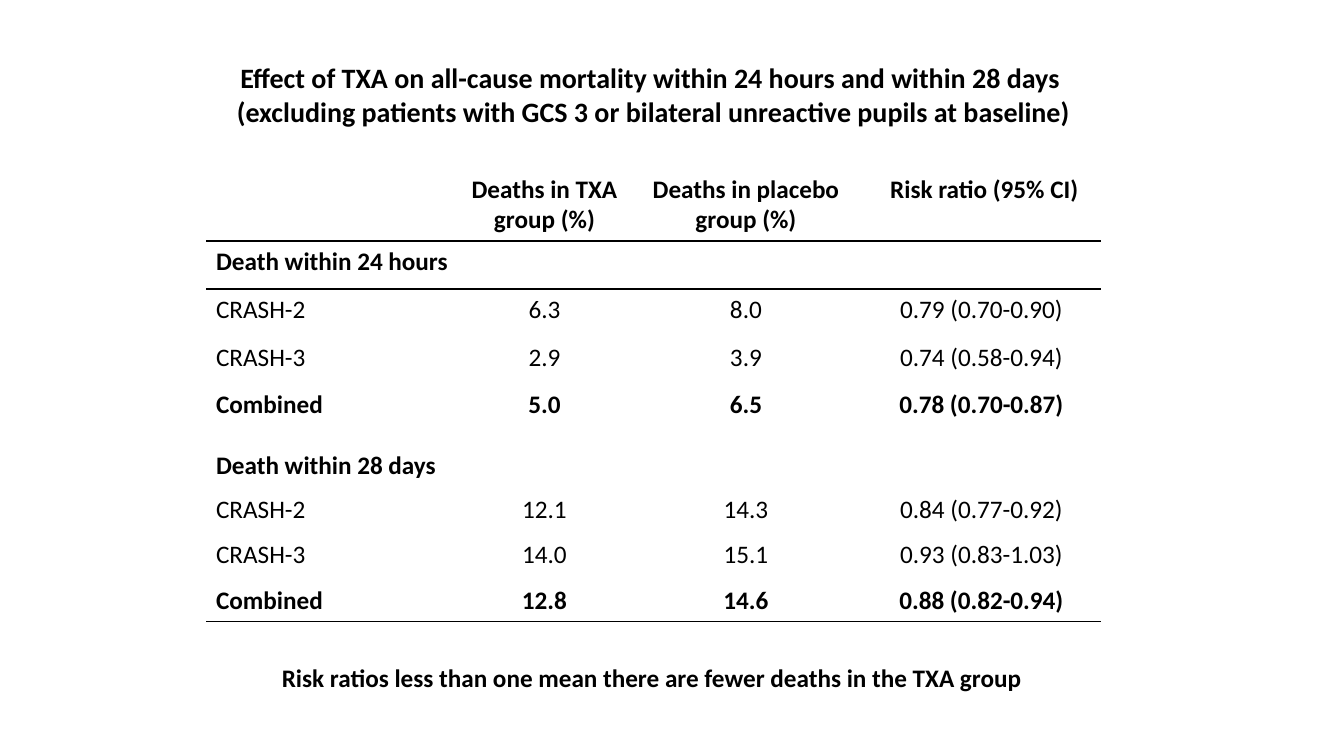
from lxml import etree
from pptx import Presentation
from pptx.dml.color import RGBColor
from pptx.enum.text import MSO_ANCHOR, PP_ALIGN
from pptx.oxml.ns import qn
from pptx.util import Emu, Pt

BLACK = RGBColor(0x00, 0x00, 0x00)
CENTER, LEFT = PP_ALIGN.CENTER, PP_ALIGN.LEFT
TOP = MSO_ANCHOR.TOP
EMU_PER_PX = 914400 / 100.8

TITLE = [
    "Effect of TXA on all-cause mortality within 24 hours and within 28 days ",
    "(excluding patients with GCS 3 or bilateral unreactive pupils at baseline)",
]
CONCLUSION = ["Risk ratios less than one mean there are fewer deaths in the TXA group"]
MORTALITY = [
    ["", "Deaths in TXA group (%)", "Deaths in placebo group (%)", " Risk ratio (95% CI)"],
    ["Death within 24 hours", "", "", ""],
    ["CRASH-2", "6.3", "8.0", "0.79 (0.70-0.90)"],
    ["CRASH-3", "2.9", "3.9", "0.74 (0.58-0.94)"],
    ["Combined", "5.0", "6.5", "0.78 (0.70-0.87)"],
    ["Death within 28 days", "", "", ""],
    ["CRASH-2", "12.1", "14.3", "0.84 (0.77-0.92)"],
    ["CRASH-3", "14.0", "15.1", "0.93 (0.83-1.03)"],
    ["Combined", "12.8", "14.6", "0.88 (0.82-0.94)"],
]
COLUMN_WIDTHS = [253, 171, 232, 239]
ROW_HEIGHTS = [72, 48, 48, 47, 62, 44, 45, 46, 41]
RULED_ROWS = {0, 1, 8}


def px(length):
    """Turn whole pixels into EMU."""
    return Emu(round(length * EMU_PER_PX))


class MortalitySlide:
    """Hold the text style and the current slide, and add elements to it."""

    def __init__(self, slide):
        """Keep the slide and the shared font values."""
        self.slide = slide
        self.style = {"name": "Calibri", "size": Pt(18), "bold": True}

    def add_wording(self, paragraph, wording, align, **changes):
        """Put styled wording into a paragraph."""
        paragraph.alignment = align
        run = paragraph.add_run()
        run.text = wording
        for key, value in {**self.style, **changes}.items():
            setattr(run.font, key, value)
        run.font.color.rgb = BLACK

    def text(self, box, lines, **changes):
        """Add a centred text box with one paragraph per line."""
        frame = self.slide.shapes.add_textbox(*map(px, box)).text_frame
        frame.word_wrap = True
        for index, line in enumerate(lines):
            paragraph = frame.add_paragraph() if index else frame.paragraphs[0]
            self.add_wording(paragraph, line, CENTER, **changes)

    def borders(self, cell, ruled_sides):
        """Rule the named sides of a cell and clear the others."""
        properties = cell._tc.get_or_add_tcPr()
        for position, side in enumerate(("lnL", "lnR", "lnT", "lnB")):
            line = etree.Element(qn(f"a:{side}"), w=str(Pt(1)))
            if side in ruled_sides:
                fill = etree.SubElement(line, qn("a:solidFill"))
                etree.SubElement(fill, qn("a:srgbClr"), val=str(BLACK))
            else:
                etree.SubElement(line, qn("a:noFill"))
            properties.insert(position, line)

    def table(self, left, top, rows, widths, heights, ruled_rows):
        """Add an unfilled table with rules below the given rows."""
        box = (left, top, sum(widths), sum(heights))
        table = self.slide.shapes.add_table(len(rows), len(widths), *map(px, box)).table
        table.first_row = table.horz_banding = False
        for column, width in zip(table.columns, widths):
            column.width = px(width)
        for r, (row, height) in enumerate(zip(rows, heights)):
            table.rows[r].height = px(height)
            sides = {side for side, rule in (("lnT", r - 1), ("lnB", r)) if rule in ruled_rows}
            bold = not row[0].startswith("CRASH")
            for c, wording in enumerate(row):
                cell = table.cell(r, c)
                cell.fill.background()
                cell.vertical_anchor = TOP
                self.borders(cell, sides)
                if wording:
                    align = CENTER if c else LEFT
                    self.add_wording(cell.text_frame.paragraphs[0], wording, align, bold=bold)


def main():
    """Build the mortality slide and save it."""
    deck = Presentation()
    deck.slide_width, deck.slide_height = px(1344), px(756)
    page = MortalitySlide(deck.slides.add_slide(deck.slide_layouts[6]))
    page.table(206, 169, MORTALITY, COLUMN_WIDTHS, ROW_HEIGHTS, RULED_ROWS)
    page.text((57, 657, 1190, 41), CONCLUSION)
    page.text((148, 56, 1011, 78), TITLE, size=Pt(20))
    deck.save("out.pptx")


if __name__ == "__main__":
    main()
